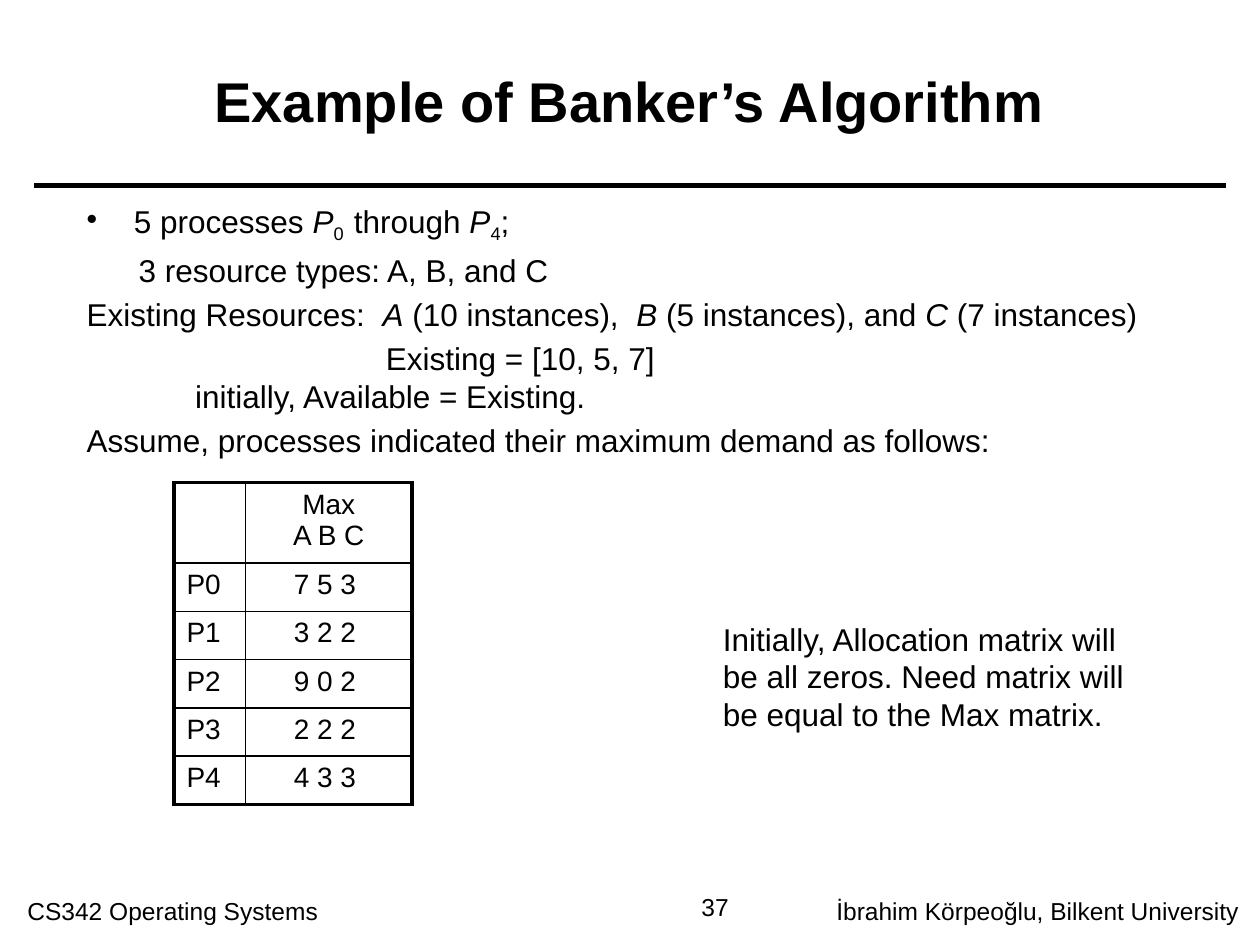
from lxml import etree
from pptx import Presentation
from pptx.dml.color import RGBColor
from pptx.enum import shapes, text
from pptx.oxml.ns import qn
from pptx.util import Pt

FONT = "Arial"
HUES = {"ink": "000000", "page": "FFFFFF"}
LEFT, MID, RIGHT = text.PP_ALIGN.LEFT, text.PP_ALIGN.CENTER, text.PP_ALIGN.RIGHT

# Content: body lines are (left indent, space before, runs);
# a run is (text, style) with style "i" italic, "s" subscript or "" plain
TITLE = "Example of Banker’s Algorithm"
BODY = [
    (27, 3.6, [("5 processes ", ""), ("P", "i"), ("0  ", "s"), ("through ", ""),
               ("P", "i"), ("4", "s"), (";", "")]),
    (29.7, 3.6, [("3 resource types: A, B, and C", "")]),
    (0, 3.6, [("Existing Resources:  ", ""), ("A", "i"), (" (10 instances),  ", ""),
              ("B", "i"), (" (5 instances), and ", ""), ("C", "i"),
              (" (7 instances)", "")]),
    (171, 3.6, [("Existing = [10, 5, 7]", "")]),
    (62, 0, [("initially, Available = Existing.", "")]),
    (0, 3.6, [("Assume, processes indicated their maximum demand as follows:", "")]),
]
DEMAND = [("", "Max\vA B C"), ("P0", "7 5 3 "), ("P1", "3 2 2 "),
          ("P2", "9 0 2 "), ("P3", "2 2 2 "), ("P4", "4 3 3 ")]
NOTE = ["Initially, Allocation matrix will", "be all zeros. Need matrix will",
        "be equal to the Max matrix."]
# Footer: text, box, alignment
FOOT = [
    ("CS342 Operating Systems", (8.6, 508.3, 340, 28), LEFT),
    ("İbrahim Körpeoğlu, Bilkent University", (468, 508.3, 250, 26), MID),
    ("37", (348.5, 506.2, 75, 24.5), RIGHT),
]


def rgb(name):
    return RGBColor.from_string(HUES[name])


def style(para, size, align=LEFT, bold=False):
    font = para.font
    font.name, font.size, font.bold = FONT, Pt(size), bold
    font.color.rgb = rgb("ink")
    para.alignment = align


def add_box(slide, box, lines, size, align=LEFT, wrap=True):
    frame = slide.shapes.add_textbox(*map(Pt, box)).text_frame
    frame.word_wrap = wrap
    frame.text = "\n".join(lines)
    for para in frame.paragraphs:
        style(para, size, align)
    return frame


def add_body(slide):
    frame = add_box(slide, (42.5, 111.6, 623.5, 187), [""] * len(BODY), 18)
    for num, (para, (left, gap, runs)) in enumerate(zip(frame.paragraphs, BODY)):
        para.space_before = Pt(gap)
        props = para._p.get_or_add_pPr()
        props.set("marL", str(Pt(left)))
        props.set("indent", str(Pt(-left if num == 0 else 0)))
        if num == 0:
            mark = etree.Element(qn("a:buChar"), char="•")
            props.find(qn("a:defRPr")).addprevious(mark)
        for words, kind in runs:
            run = para.add_run()
            run.text = words
            run.font.italic = kind == "i"
            if kind == "s":
                run.font._element.set("baseline", "-25000")


def set_edge(cell, side, width):
    edge = etree.SubElement(cell._tc.get_or_add_tcPr(), qn("a:" + side),
                            w=str(Pt(width)))
    fill = etree.SubElement(edge, qn("a:solidFill"))
    etree.SubElement(fill, qn("a:srgbClr"), val=HUES["ink"])


def add_grid(slide):
    wide, high = (41, 95), [46] + [27.6] * 5
    frame = slide.shapes.add_table(len(high), len(wide), Pt(99.4), Pt(275.8),
                                   Pt(sum(wide)), Pt(sum(high)))
    grid = frame.table
    for col, size in zip(grid.columns, wide):
        col.width = Pt(size)
    for row, size in zip(grid.rows, high):
        row.height = Pt(size)
    for r, line in enumerate(DEMAND):
        for c, words in enumerate(line):
            cell = grid.cell(r, c)
            cell.text = words
            para = cell.text_frame.paragraphs[0]
            style(para, 16, MID if c else LEFT)
            para.space_before = Pt(3.2)
            cell.margin_left = cell.margin_right = Pt(7.2)
            cell.margin_top = cell.margin_bottom = Pt(3.6)
            # Thick outer frame, thin inner rules
            outer = {"lnL": c == 0, "lnR": c == len(wide) - 1,
                     "lnT": r == 0, "lnB": r == len(high) - 1}
            for side, thick in outer.items():
                set_edge(cell, side, 2.25 if thick else 1)
            cell.fill.solid()
            cell.fill.fore_color.rgb = rgb("page")


def main():
    deck = Presentation()
    deck.slide_width, deck.slide_height = Pt(720), Pt(540)
    slide = deck.slides.add_slide(deck.slide_layouts[5])

    # Title and rule
    head = slide.shapes.title
    head.left, head.top, head.width, head.height = map(Pt, (25.2, 12.2, 669, 90))
    head.text_frame.text = TITLE
    head.text_frame.vertical_anchor = text.MSO_ANCHOR.MIDDLE
    style(head.text_frame.paragraphs[0], 32, MID, True)
    rule = slide.shapes.add_connector(shapes.MSO_CONNECTOR.STRAIGHT,
                                      *map(Pt, (19.6, 105.8, 700.4, 105.8)))
    rule.line.width = Pt(3)
    rule.line.color.rgb = rgb("ink")
    etree.SubElement(rule._element.spPr, qn("a:effectLst"))

    # Body, demand table, side note
    add_body(slide)
    add_grid(slide)
    add_box(slide, (406, 350.6, 243.4, 72), NOTE, 18, wrap=False)

    # Footer
    for words, box, align in FOOT:
        add_box(slide, box, [words], 14, align)
    deck.save("out.pptx")


if __name__ == "__main__":
    main()
